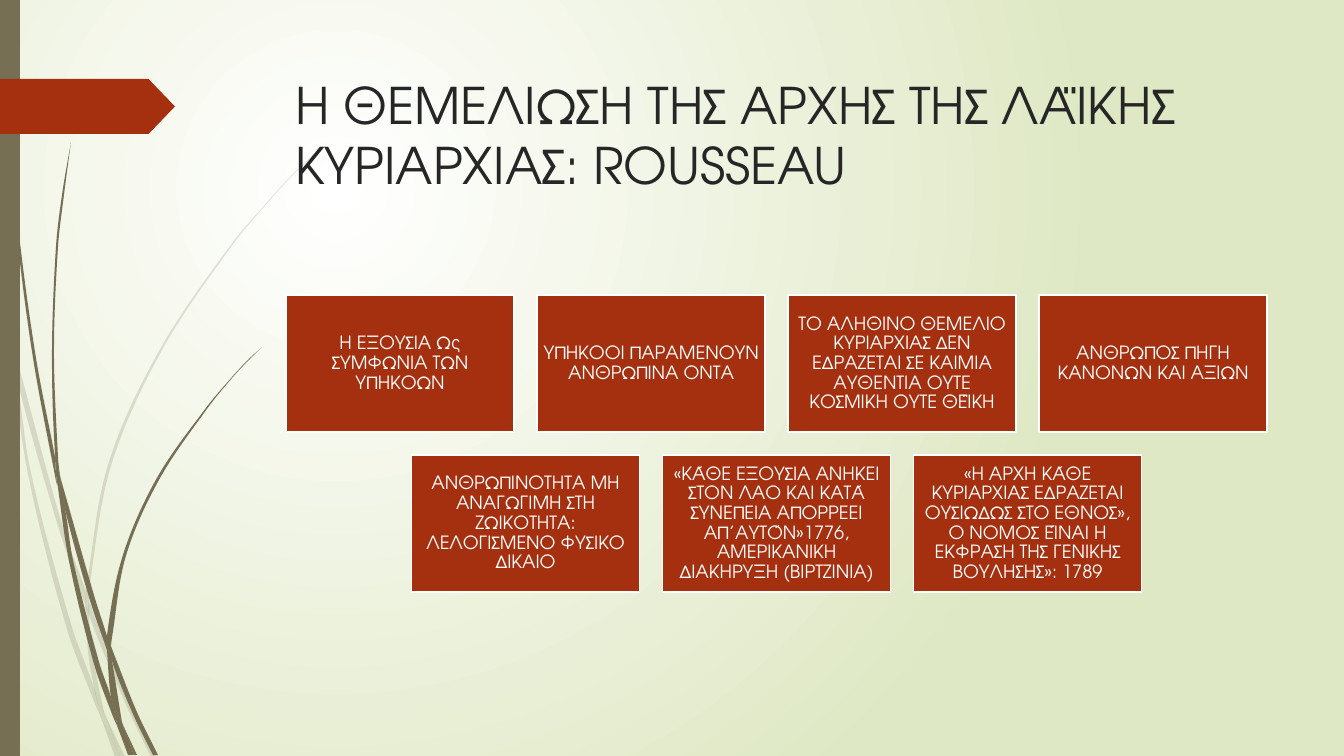
"""Build a slide on Rousseau and popular sovereignty, with seven cards and grass blades."""
import dataclasses
import math

import lxml.etree
import pptx
import pptx.dml.color
import pptx.enum.shapes
import pptx.enum.text
import pptx.oxml.ns
import pptx.util

TITLE = "Η ΘΕΜΕΛΙΩΣΗ ΤΗΣ ΑΡΧΗΣ ΤΗΣ ΛΑΪΚΗΣ ΚΥΡΙΑΡΧΙΑΣ: ROUSSEAU"
CARD_ROWS = [
    [
        "Η ΕΞΟΥΣΙΑ Ως ΣΥΜΦΩΝΙΑ ΤΩΝ ΥΠΗΚΟΩΝ",
        "ΥΠΗΚΟΟΙ ΠΑΡΑΜΕΝΟΥΝ ΑΝΘΡΩΠΙΝΑ ΟΝΤΑ",
        "ΤΟ ΑΛΗΘΙΝΟ ΘΕΜΕΛΙΟ ΚΥΡΙΑΡΧΙΑΣ ΔΕΝ ΕΔΡΑΖΕΤΑΙ ΣΕ ΚΑΙΜΙΑ ΑΥΘΕΝΤΙΑ "
        "ΟΥΤΕ ΚΟΣΜΙΚΗ ΟΥΤΕ ΘΕΪΚΗ",
        "ΑΝΘΡΩΠΟΣ ΠΗΓΗ ΚΑΝΟΝΩΝ ΚΑΙ ΑΞΙΩΝ",
    ],
    [
        "ΑΝΘΡΩΠΙΝΟΤΗΤΑ ΜΗ ΑΝΑΓΩΓΙΜΗ ΣΤΗ ΖΩΙΚΟΤΗΤΑ: ΛΕΛΟΓΙΣΜΕΝΟ ΦΥΣΙΚΟ ΔΙΚΑΙΟ",
        "«ΚΆΘΕ ΕΞΟΥΣΙΑ ΑΝΗΚΕΙ ΣΤΟΝ ΛΑΟ ΚΑΙ ΚΑΤΆ ΣΥΝΕΠΕΙΑ ΑΠΟΡΡΕΕΙ "
        "ΑΠ’ΑΥΤΌΝ»1776, ΑΜΕΡΙΚΑΝΙΚΗ ΔΙΑΚΗΡΥΞΗ (ΒΙΡΤΖΙΝΙΑ)",
        "«Η ΑΡΧΗ ΚΆΘΕ ΚΥΡΙΑΡΧΙΑΣ ΕΔΡΑΖΕΤΑΙ ΟΥΣΙΩΔΩΣ ΣΤΟ ΕΘΝΟΣ», Ο ΝΟΜΟΣ "
        "ΕΊΝΑΙ Η ΕΚΦΡΑΣΗ ΤΗΣ ΓΕΝΙΚΗΣ ΒΟΥΛΗΣΗΣ»: 1789",
    ],
]
PALE_BLADES = [
    ([(0, 301), (10, 347), (11, 353)], [(0, 284), (9, 325), (11, 353)]),
    ([(14, 348), (17, 379), (58, 526), (85, 604)], [(14, 348), (62, 524), (86, 591)]),
    ([(89, 601), (89, 615), (124, 700), (151, 757)],
     [(89, 601), (93, 612), (128, 698), (156, 757)]),
    ([(106, 717), (120, 757)], [(106, 717), (125, 757)]),
    ([(11, 353), (28, 474), (66, 626), (93, 699), (102, 720)],
     [(11, 353), (17, 379), (31, 473), (71, 624), (94, 688), (100, 713), (102, 720)]),
    ([(85, 604), (88, 651), (94, 688), (97, 698), (106, 717)],
     [(85, 604), (89, 613), (89, 615), (92, 651), (104, 712), (106, 717)]),
    ([(314, 154), (291, 176), (270, 199), (230, 246), (159, 351), (108, 465),
      (86, 589), (86, 591), (89, 601)],
     [(314, 155), (292, 176), (270, 200), (231, 247), (161, 352), (111, 466),
      (89, 589), (89, 601)]),
    ([(102, 720), (115, 757)], [(102, 720), (120, 757)]),
    ([(86, 591), (85, 604), (89, 613)], [(86, 591), (89, 601), (89, 615)]),
    ([(94, 688), (100, 713), (102, 720), (120, 757)],
     [(94, 688), (97, 698), (106, 717), (120, 757)]),
]
DARK_BLADES = [
    ([(3, 0), (4, 48), (7, 111), (17, 235), (33, 358), (56, 481), (57, 485)],
     [(4, 0), (5, 48), (8, 110), (19, 234), (36, 358), (55, 457), (55, 461), (57, 485)]),
    ([(60, 476), (65, 509), (89, 597), (107, 650)],
     [(60, 476), (94, 595), (107, 636), (107, 638)]),
    ([(111, 646), (112, 661), (133, 714), (153, 755)],
     [(111, 646), (114, 654), (137, 712), (158, 755)]),
    ([(57, 481), (69, 561), (94, 664), (112, 714), (118, 728)],
     [(57, 481), (65, 509), (73, 560), (99, 662), (111, 697), (117, 723), (118, 728)]),
    ([(71, 142), (62, 195), (56, 247), (52, 352), (55, 453), (60, 476)],
     [(71, 142), (64, 195), (58, 247), (54, 352), (58, 457), (60, 476)]),
    ([(123, 725), (134, 755)], [(123, 725), (137, 755)]),
    ([(55, 453), (55, 457), (57, 481), (65, 509)], [(55, 453), (60, 476), (65, 509)]),
    ([(262, 347), (247, 361), (233, 376), (206, 408), (157, 478), (123, 555),
      (107, 636), (111, 646)],
     [(262, 347), (247, 362), (233, 377), (207, 409), (159, 480), (126, 556),
      (112, 638), (111, 646)]),
    ([(118, 728), (128, 755)], [(118, 728), (132, 755)]),
    ([(107, 650), (111, 697), (117, 712), (123, 725)],
     [(107, 650), (110, 656), (112, 661), (122, 722), (123, 725)]),
    ([(107, 636), (107, 650), (112, 661)], [(107, 636), (111, 646), (112, 661)]),
    ([(111, 697), (117, 723), (118, 728), (131, 755)],
     [(111, 697), (117, 712), (123, 725), (134, 755)]),
]


@dataclasses.dataclass(frozen=True)
class Theme:
    """Colours, font and type sizes."""
    red: str = "A53010"
    olive: str = "766F54"
    white: str = "FFFFFF"
    green: str = "DFE8C4"
    ink: str = "262626"
    font: str = "TeX Gyre Adventor"
    title_size: int = 36
    card_size: int = 13


THEME = Theme()
SLIDE_WIDTH, SLIDE_HEIGHT = 1344, 756
CARD_WIDTH, CARD_HEIGHT, CARD_GAP = 228, 137, 23
CARDS_LEFT, CARDS_TOP = 286, 295
SHAPES = pptx.enum.shapes.MSO_SHAPE
ALIGN = pptx.enum.text.PP_ALIGN
ANCHOR = pptx.enum.text.MSO_ANCHOR
qn = pptx.oxml.ns.qn


def px(length):
    """Turn pixels into EMU."""
    return pptx.util.Emu(round(length * 914400 / 100.8))


def rgb(color):
    """Return a colour object for a hex string."""
    return pptx.dml.color.RGBColor.from_string(color)


def write_text(shape, text, *, size, color, align, anchor, inset_x, inset_y, spacing):
    """Put one formatted paragraph into a shape."""
    frame = shape.text_frame
    frame.text = text
    frame.word_wrap = True
    frame.auto_size = pptx.enum.text.MSO_AUTO_SIZE.NONE
    frame.vertical_anchor = anchor
    frame.margin_left = frame.margin_right = px(inset_x)
    frame.margin_top = frame.margin_bottom = px(inset_y)
    paragraph = frame.paragraphs[0]
    paragraph.alignment, paragraph.line_spacing = align, spacing
    paragraph.space_before = pptx.util.Pt(0)
    font = paragraph.runs[0].font
    font.name, font.size = THEME.font, pptx.util.Pt(size)
    font.color.rgb = rgb(color)


def paint(shape, fill, line=None):
    """Give a shape a flat fill, an optional outline and no shadow."""
    shape.shadow.inherit = False
    shape.fill.solid()
    shape.fill.fore_color.rgb = rgb(fill)
    if line:
        shape.line.color.rgb = rgb(line)
        shape.line.width = pptx.util.Pt(1.25)
    else:
        shape.line.fill.background()


def add_box(slide, kind, left, top, width, height, fill, line=None):
    """Add a painted preset shape."""
    shape = slide.shapes.add_shape(kind, px(left), px(top), px(width), px(height))
    paint(shape, fill, line)
    return shape


def curve_handles(edge):
    """Return the two Bezier handles of each segment of a smooth edge."""
    padded = [edge[0], *edge, edge[-1]]
    tangents = []
    for (x0, y0), (x1, y1) in zip(padded, padded[2:]):
        length = math.hypot(x1 - x0, y1 - y0)
        tangents.append(((x1 - x0) / length, (y1 - y0) / length))
    handles = []
    for start, end, leave, arrive in zip(edge, edge[1:], tangents, tangents[1:]):
        reach = math.dist(start, end) / 3
        handles.append([(start[0] + leave[0] * reach, start[1] + leave[1] * reach),
                        (end[0] - arrive[0] * reach, end[1] - arrive[1] * reach)])
    return handles


def add_blade(slide, left_edge, right_edge, opacity):
    """Draw one grass blade between two curved edges."""
    return_edge = right_edge[::-1]
    outline = [(px(x), px(y)) for x, y in left_edge + return_edge]
    builder = slide.shapes.build_freeform(*outline[0], scale=1.0)
    builder.add_line_segments(outline[1:], close=True)
    blade = builder.convert_to_shape()
    paint(blade, THEME.olive)
    properties = blade.element.spPr
    handles = curve_handles(left_edge) + [None] + curve_handles(return_edge)
    for segment, pair in zip(properties.findall(".//" + qn("a:lnTo")), handles):
        if pair:
            curve = lxml.etree.Element(qn("a:cubicBezTo"))
            for x, y in pair:
                lxml.etree.SubElement(curve, qn("a:pt"), x=str(px(x) - blade.left),
                                      y=str(px(y) - blade.top))
            segment.getparent().replace(segment, curve)
            curve.append(segment[0])
    color = properties.find(".//" + qn("a:srgbClr"))
    lxml.etree.SubElement(color, qn("a:alpha"), val=str(opacity * 1000))


def paint_background(slide):
    """Fill the background with a radial gradient."""
    fill = slide.background.fill
    fill.gradient()
    for position, (stop, color) in enumerate(zip(fill.gradient_stops,
                                                 (THEME.white, THEME.green))):
        stop.color.rgb, stop.position = rgb(color), position
    linear = slide.element.find(".//" + qn("a:lin"))
    radial = lxml.etree.Element(qn("a:path"), path="circle")
    lxml.etree.SubElement(radial, qn("a:fillToRect"),
                          l="50000", t="50000", r="100000", b="100000")
    linear.getparent().replace(linear, radial)


def add_cards(slide):
    """Lay out the rows of cards, each centred under the widest row."""
    pitch = CARD_WIDTH + CARD_GAP
    widest = max(len(row) for row in CARD_ROWS)
    for row_index, row in enumerate(CARD_ROWS):
        row_left = CARDS_LEFT + (widest - len(row)) * pitch / 2
        top = CARDS_TOP + row_index * (CARD_HEIGHT + CARD_GAP)
        for column, text in enumerate(row):
            card = add_box(slide, SHAPES.RECTANGLE, row_left + column * pitch, top,
                           CARD_WIDTH, CARD_HEIGHT, THEME.red, THEME.white)
            write_text(card, text, size=THEME.card_size, color=THEME.white, spacing=0.9,
                       align=ALIGN.CENTER, anchor=ANCHOR.MIDDLE, inset_x=5, inset_y=5)


def main():
    """Build and save the slide."""
    presentation = pptx.Presentation()
    presentation.slide_width, presentation.slide_height = px(SLIDE_WIDTH), px(SLIDE_HEIGHT)
    slide = presentation.slides.add_slide(presentation.slide_layouts[5])
    paint_background(slide)
    for blades, opacity in ((PALE_BLADES, 20), (DARK_BLADES, 100)):
        for left_edge, right_edge in blades:
            add_blade(slide, left_edge, right_edge, opacity)
    add_box(slide, SHAPES.RECTANGLE, 0, 0, 20, SLIDE_HEIGHT, THEME.olive)
    arrow = add_box(slide, SHAPES.PENTAGON, 0, 79, 175, 55, THEME.red)
    arrow.adjustments[0] = 0.48
    title = slide.shapes.title
    slide.shapes.element.append(title.element)
    title.left, title.top, title.width, title.height = px(286), px(69), px(983), px(141)
    write_text(title, TITLE, size=THEME.title_size, color=THEME.ink, align=ALIGN.LEFT,
               anchor=ANCHOR.TOP, inset_x=9, inset_y=5, spacing=1.0)
    add_cards(slide)
    presentation.save("out.pptx")


if __name__ == "__main__":
    main()
